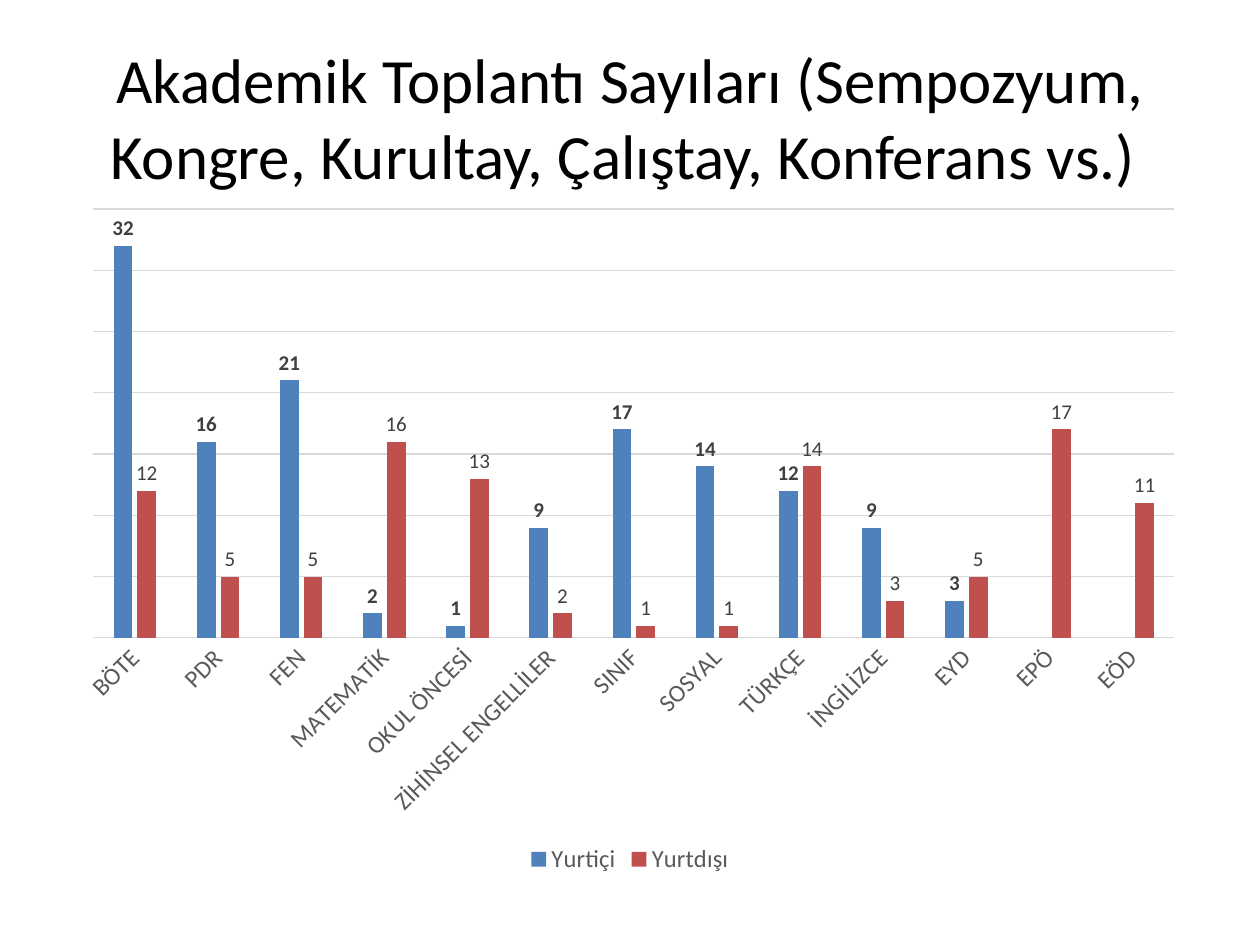
from pptx import Presentation
from pptx.chart.data import CategoryChartData
from pptx.dml.color import RGBColor
from pptx.enum.chart import (XL_CHART_TYPE, XL_LABEL_POSITION,
                             XL_LEGEND_POSITION, XL_TICK_MARK)
from pptx.enum.text import MSO_ANCHOR, PP_ALIGN
from pptx.util import Inches, Pt

COLUMNS = XL_CHART_TYPE.COLUMN_CLUSTERED
OUTSIDE_END = XL_LABEL_POSITION.OUTSIDE_END
BOTTOM = XL_LEGEND_POSITION.BOTTOM
NO_TICK = XL_TICK_MARK.NONE
MIDDLE = MSO_ANCHOR.MIDDLE
CENTER = PP_ALIGN.CENTER

TITLE = "Akademik Toplantı Sayıları (Sempozyum, Kongre, Kurultay, Çalıştay, Konferans vs.) "
MEETINGS = [  # department, Yurtiçi, Yurtdışı
    ("BÖTE", 32, 12),
    ("PDR", 16, 5),
    ("FEN", 21, 5),
    ("MATEMATİK", 2, 16),
    ("OKUL ÖNCESİ", 1, 13),
    ("ZİHİNSEL ENGELLİLER", 9, 2),
    ("SINIF", 17, 1),
    ("SOSYAL", 14, 1),
    ("TÜRKÇE", 12, 14),
    ("İNGİLİZCE", 9, 3),
    ("EYD", 3, 5),
    ("EPÖ", None, 17),
    ("EÖD", None, 11),
]
SERIES = [  # name, colour, bold labels
    ("Yurtiçi", "4F81BD", True),
    ("Yurtdışı", "C0504D", False),
]
THEME = {
    "font": "Calibri",
    "title": {"size": 36, "color": "000000"},
    "chart": {"size": 10, "color": "000000"},
    "axis": {"size": 14, "color": "595959"},
    "label": {"size": 12, "color": "404040"},
    "line": "D9D9D9",
}
TITLE_BOX = (0.5, 0.3, 9, 1.25)
CHART_BOX = (0.5, 1.55, 9, 5.43)


def style_font(font, role, bold=False):
    style = THEME[role]
    values = {"name": THEME["font"], "size": Pt(style["size"]), "bold": bold}
    for name, value in values.items():
        setattr(font, name, value)
    font.color.rgb = RGBColor.from_string(style["color"])


def style_line(line):
    line.width = Pt(0.75)
    line.color.rgb = RGBColor.from_string(THEME["line"])


def add_title(s):
    tf = s.shapes.add_textbox(*map(Inches, TITLE_BOX)).text_frame
    tf.word_wrap = True
    tf.vertical_anchor = MIDDLE
    p = tf.paragraphs[0]
    p.alignment = CENTER
    r = p.add_run()
    r.text = TITLE
    style_font(r.font, "title")


def style_axes(chart):
    cat = chart.category_axis
    cat.major_tick_mark = cat.minor_tick_mark = NO_TICK
    style_line(cat.format.line)
    style_font(cat.tick_labels.font, "axis")
    # Slant the department names by 45 degrees
    cat._element.txPr.bodyPr.set("rot", "-2700000")

    val = chart.value_axis
    val.visible = False
    val.minimum_scale, val.maximum_scale, val.major_unit = 0, 35, 5
    val.has_major_gridlines = True
    style_line(val.major_gridlines.format.line)


def add_meetings_chart(s):
    departments, *columns = zip(*MEETINGS)
    data = CategoryChartData()
    data.categories = departments
    for (name, _, _), values in zip(SERIES, columns):
        data.add_series(name, values)

    chart = s.shapes.add_chart(COLUMNS, *map(Inches, CHART_BOX), data).chart
    chart.has_title = False
    style_font(chart.font, "chart")
    style_axes(chart)

    chart.has_legend = True
    chart.legend.position = BOTTOM
    chart.legend.include_in_layout = False
    style_font(chart.legend.font, "axis")

    plot = chart.plots[0]
    plot.vary_by_categories = False
    plot.gap_width = 219
    plot.overlap = -27
    for series, (_, color, bold) in zip(plot.series, SERIES):
        series.invert_if_negative = False
        series.format.fill.solid()
        series.format.fill.fore_color.rgb = RGBColor.from_string(color)
        labels = series.data_labels
        labels.show_value = True
        labels.position = OUTSIDE_END
        style_font(labels.font, "label", bold)


def main():
    prs = Presentation()
    prs.slide_width, prs.slide_height = Inches(10), Inches(7.5)
    s = prs.slides.add_slide(prs.slide_layouts[6])
    add_title(s)
    add_meetings_chart(s)
    prs.save("out.pptx")


if __name__ == "__main__":
    main()
